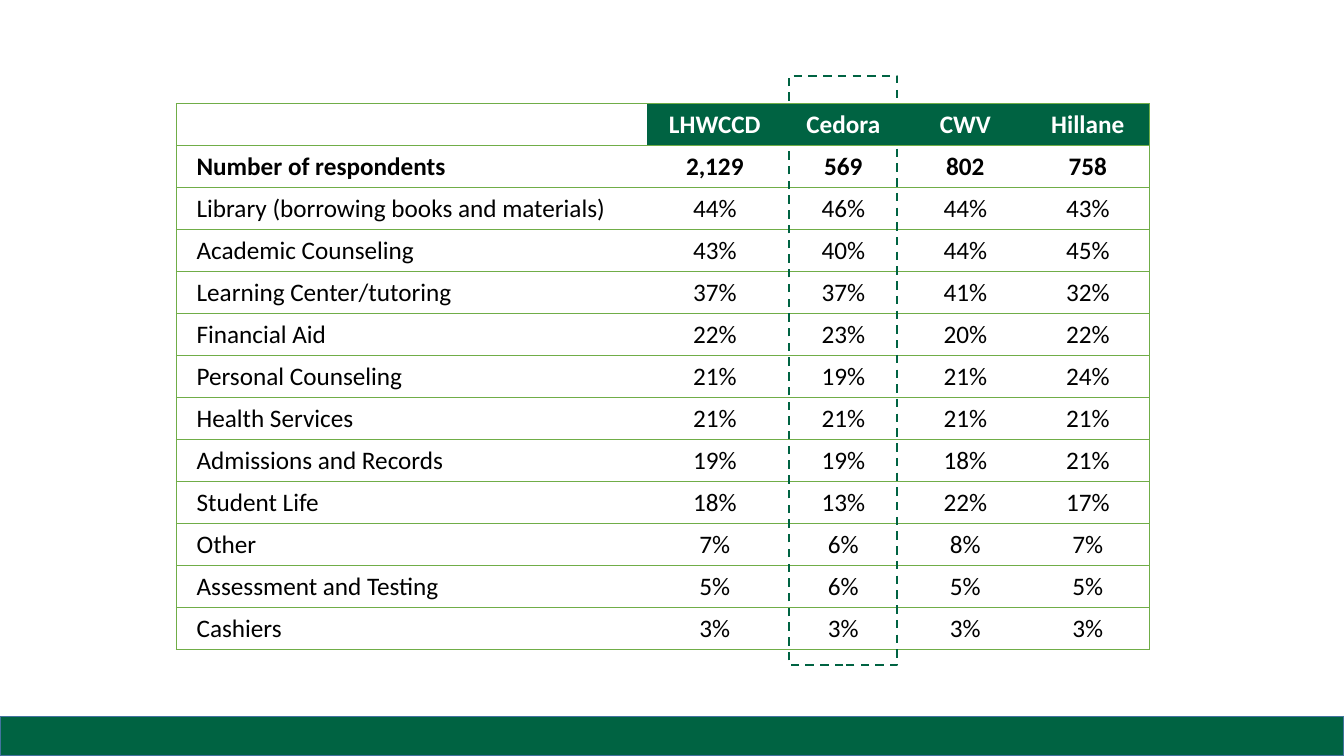
from dataclasses import dataclass

from lxml.etree import SubElement
from pptx import Presentation
from pptx.dml.color import RGBColor
from pptx.enum.dml import MSO_LINE
from pptx.enum.shapes import MSO_SHAPE
from pptx.enum.text import MSO_ANCHOR, PP_ALIGN
from pptx.oxml.ns import qn
from pptx.shapes.autoshape import Shape
from pptx.slide import Slide
from pptx.table import _Cell
from pptx.util import Inches, Pt

PAGE_WIDTH, PAGE_HEIGHT = 13.33, 7.5
GREEN, LEAF, BAND_EDGE, WHITE, BLACK = "006342", "70AD47", "43739E", "FFFFFF", "000000"
TABLE_LEFT, TABLE_TOP, TABLE_HEIGHT = 1.75, 1.03, 5.41
COLUMN_WIDTHS = (4.67, 1.34, 1.21, 1.21, 1.22)
HIGHLIGHT_COLUMN, HIGHLIGHT_INSET = 2, 0.07
HIGHLIGHT_ABOVE, HIGHLIGHT_BELOW = 0.28, 0.16
FOOTER_HEIGHT = 0.39


@dataclass(frozen=True)
class Row:
    """One table row and its look."""

    texts: tuple[str, ...]
    bold: bool = False
    color: str = BLACK
    fill: str = WHITE


@dataclass(frozen=True)
class Area:
    """A rectangle in inches."""

    left: float
    top: float
    width: float
    height: float


ROWS = (
    Row(("", "LHWCCD", "Cedora", "CWV", "Hillane"), True, WHITE, GREEN),
    Row(("Number of respondents", "2,129", "569", "802", "758"), True),
    Row(("Library (borrowing books and materials)", "44%", "46%", "44%", "43%")),
    Row(("Academic Counseling", "43%", "40%", "44%", "45%")),
    Row(("Learning Center/tutoring", "37%", "37%", "41%", "32%")),
    Row(("Financial Aid", "22%", "23%", "20%", "22%")),
    Row(("Personal Counseling", "21%", "19%", "21%", "24%")),
    Row(("Health Services", "21%", "21%", "21%", "21%")),
    Row(("Admissions and Records", "19%", "19%", "18%", "21%")),
    Row(("Student Life", "18%", "13%", "22%", "17%")),
    Row(("Other", "7%", "6%", "8%", "7%")),
    Row(("Assessment and Testing", "5%", "6%", "5%", "5%")),
    Row(("Cashiers", "3%", "3%", "3%", "3%")),
)


def rgb(color: str) -> RGBColor:
    """Turn a hex string into a colour."""
    return RGBColor.from_string(color)


def add_box(page: Slide, area: Area, edge: str, weight: float) -> Shape:
    """Draw an outlined rectangle without fill or shadow."""
    box = page.shapes.add_shape(
        MSO_SHAPE.RECTANGLE,
        *map(Inches, (area.left, area.top, area.width, area.height)),
    )
    box.shadow.inherit = False
    box.fill.background()
    box.line.color.rgb = rgb(edge)
    box.line.width = Pt(weight)
    return box


def set_borders(cell: _Cell, visible: dict[str, bool]) -> None:
    """Draw the visible cell sides and hide the others."""
    properties = cell._tc.get_or_add_tcPr()
    for side, shown in visible.items():
        line = SubElement(properties, qn(f"a:{side}"), w=str(Pt(1)))
        fill = SubElement(line, qn("a:solidFill" if shown else "a:noFill"))
        if shown:
            SubElement(fill, qn("a:srgbClr"), val=LEAF)


def fill_cell(cell: _Cell, row: Row, column: int) -> None:
    """Write and format one cell."""
    last = len(COLUMN_WIDTHS) - 1
    set_borders(cell, {"lnL": column == 0, "lnR": column == last, "lnT": True, "lnB": True})
    text = row.texts[column]
    cell.fill.solid()
    cell.fill.fore_color.rgb = rgb(row.fill if text else WHITE)
    cell.vertical_anchor = MSO_ANCHOR.MIDDLE
    cell.margin_left = cell.margin_right = Inches(0.2)
    cell.margin_top, cell.margin_bottom = Inches(0.01), 0
    cell.text_frame.text = text
    para = cell.text_frame.paragraphs[0]
    para.alignment = PP_ALIGN.CENTER if column else PP_ALIGN.LEFT
    for span in para.runs:
        span.font.name = "Calibri"
        span.font.size = Pt(18)
        span.font.bold = row.bold
        span.font.color.rgb = rgb(row.color)


def add_survey_table(page: Slide) -> None:
    """Build the table of services by college."""
    table = page.shapes.add_table(
        len(ROWS), len(COLUMN_WIDTHS),
        *map(Inches, (TABLE_LEFT, TABLE_TOP, sum(COLUMN_WIDTHS), TABLE_HEIGHT)),
    ).table
    table.first_row = table.horz_banding = False
    for column, width in zip(table.columns, COLUMN_WIDTHS):
        column.width = Inches(width)
    for index, row in enumerate(ROWS):
        for column in range(len(COLUMN_WIDTHS)):
            fill_cell(table.cell(index, column), row, column)


def main() -> None:
    """Build and save the slide."""
    deck = Presentation()
    deck.slide_width, deck.slide_height = Inches(PAGE_WIDTH), Inches(PAGE_HEIGHT)
    page = deck.slides.add_slide(deck.slide_layouts[6])

    footer_area = Area(0, PAGE_HEIGHT - FOOTER_HEIGHT, PAGE_WIDTH, FOOTER_HEIGHT)
    footer = add_box(page, footer_area, BAND_EDGE, 1)
    footer.fill.solid()
    footer.fill.fore_color.rgb = rgb(GREEN)

    add_survey_table(page)

    highlight_area = Area(
        TABLE_LEFT + sum(COLUMN_WIDTHS[:HIGHLIGHT_COLUMN]) + HIGHLIGHT_INSET,
        TABLE_TOP - HIGHLIGHT_ABOVE,
        COLUMN_WIDTHS[HIGHLIGHT_COLUMN] - 2 * HIGHLIGHT_INSET,
        TABLE_HEIGHT + HIGHLIGHT_ABOVE + HIGHLIGHT_BELOW,
    )
    highlight = add_box(page, highlight_area, GREEN, 1.5)
    highlight.line.dash_style = MSO_LINE.DASH

    deck.save("out.pptx")


if __name__ == "__main__":
    main()
